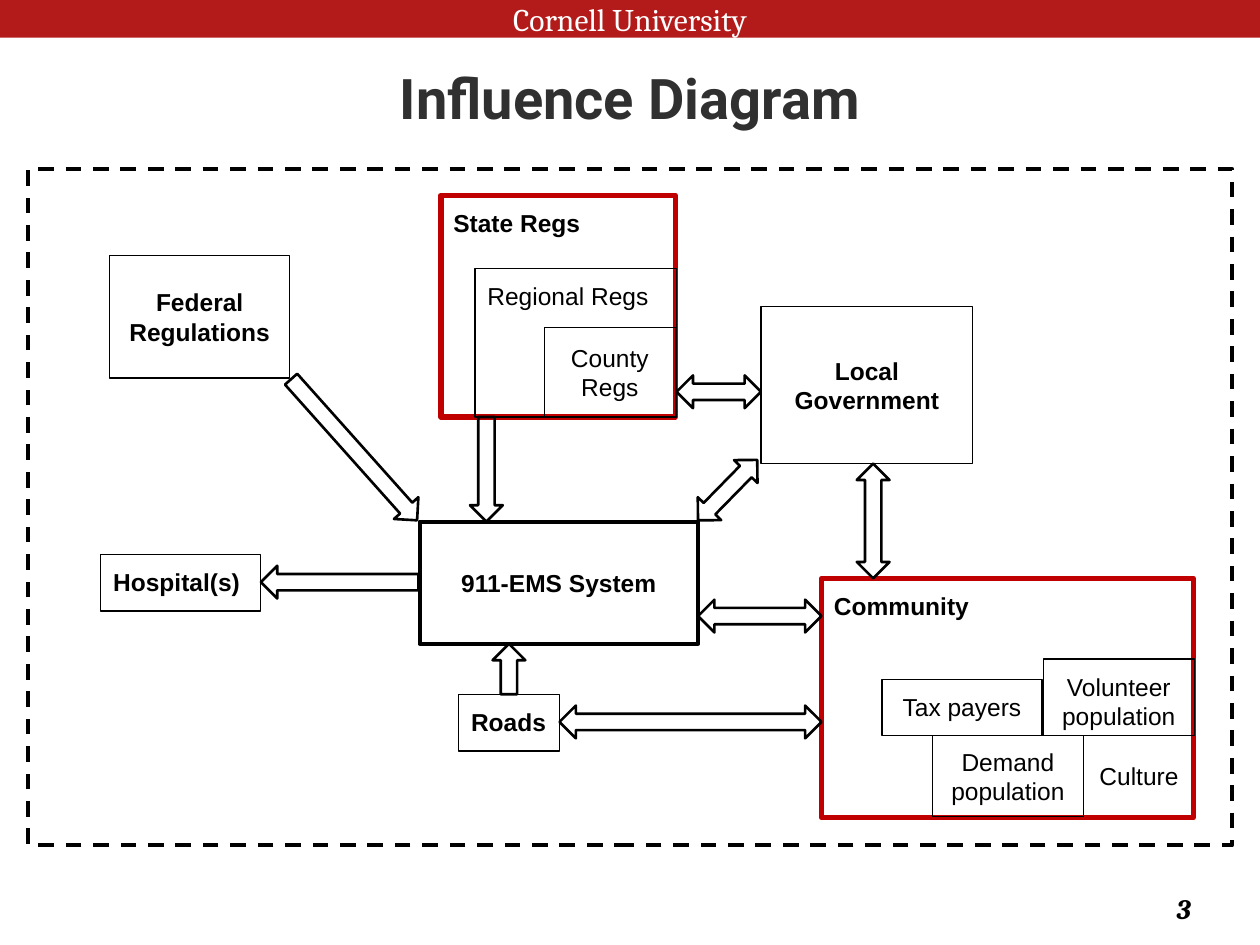
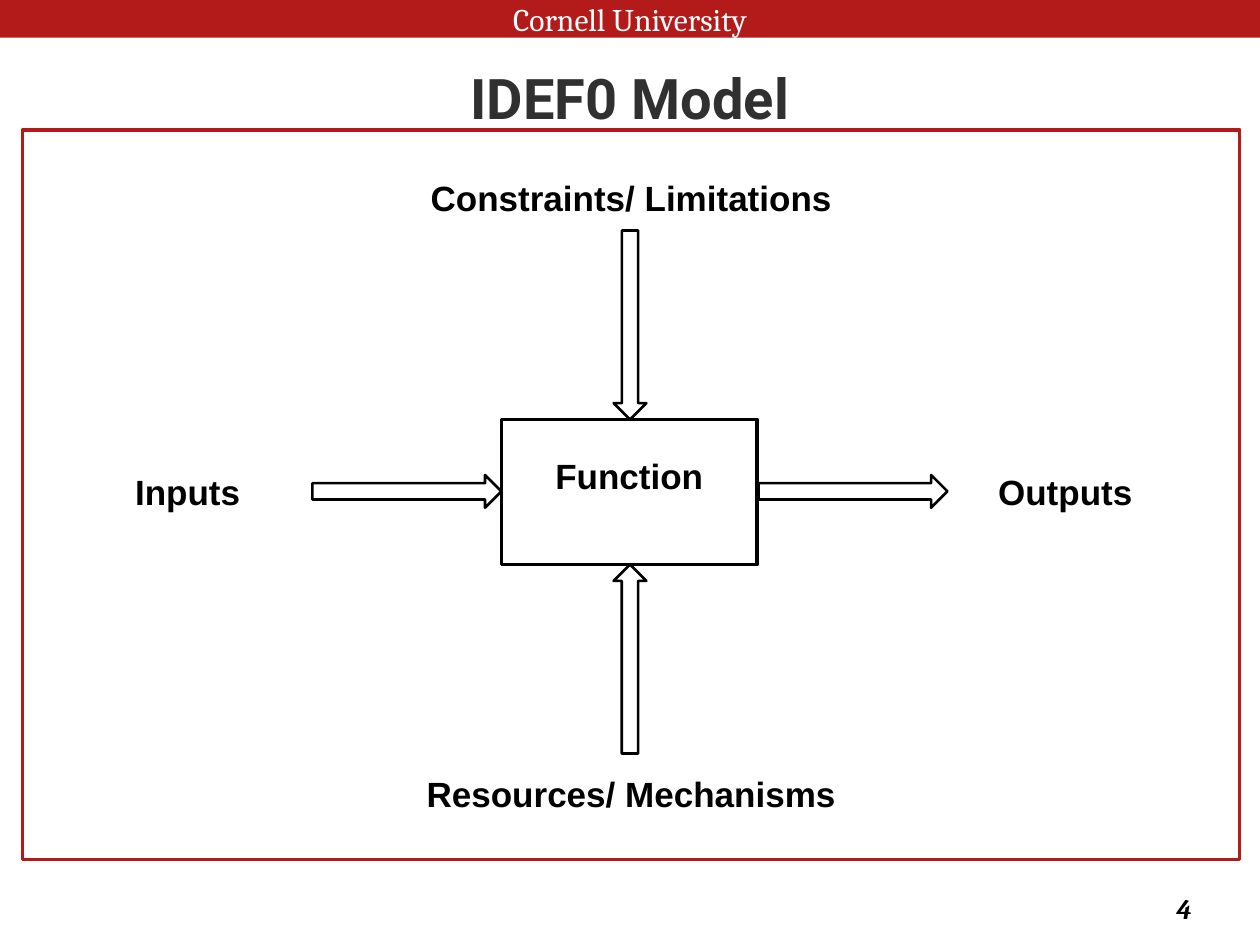
from dataclasses import dataclass
from math import atan2, degrees, hypot

from pptx import Presentation
from pptx.dml.color import RGBColor
from pptx.enum.dml import MSO_LINE
from pptx.enum.shapes import MSO_SHAPE
from pptx.enum.text import MSO_ANCHOR, MSO_AUTO_SIZE, PP_ALIGN
from pptx.util import Inches, Pt


@dataclass(frozen=True)
class Theme:
    red: str = "B31B1B"
    border_red: str = "C00000"
    ink: str = "000000"
    title_ink: str = "303030"
    white: str = "FFFFFF"
    body_font: str = "Arial"
    band_font: str = "Cambria"
    title_font: str = "Roboto"
    title_size: int = 32
    band_size: int = 18
    number_size: int = 16
    label_size: int = 20
    box_size: int = 14
    arrow_width: float = 0.26


THEME = Theme()
CENTER, LEFT = PP_ALIGN.CENTER, PP_ALIGN.LEFT
MIDDLE, TOP = MSO_ANCHOR.MIDDLE, MSO_ANCHOR.TOP


def write(sp, text, size=THEME.box_size, font=THEME.body_font, color=THEME.ink,
          bold=False, italic=False, align=CENTER, anchor=MIDDLE,
          inset=0.1, inset_y=0.1):
    tf = sp.text_frame
    tf.word_wrap = True
    tf.auto_size = MSO_AUTO_SIZE.NONE
    tf.vertical_anchor = anchor
    tf.margin_left = tf.margin_right = Inches(inset)
    tf.margin_top = tf.margin_bottom = Inches(inset_y)
    p = tf.paragraphs[0]
    p.alignment = align
    r = p.add_run()
    r.text = text
    r.font.name = font
    r.font.size = Pt(size)
    r.font.bold = bold
    r.font.italic = italic
    r.font.color.rgb = RGBColor.from_string(color)


class Deck:
    def __init__(self, theme):
        self.theme = theme
        self.prs = Presentation()
        self.prs.slide_width = Inches(10)
        self.prs.slide_height = Inches(7.5)
        self.slide = None

    def new_slide(self, title, number):
        t = self.theme
        self.slide = self.prs.slides.add_slide(self.prs.slide_layouts[5])
        self.label(str(number), (8.9, 7.01, 0.99, 0.4), size=t.number_size,
                   font=t.band_font, italic=True)
        self.shape((0, 0, 10, 0.3), "Cornell University", fill=t.red, line=None,
                   size=t.band_size, font=t.band_font, color=t.white, inset_y=0.05)
        sp = self.slide.shapes.title
        sp.left, sp.top, sp.width, sp.height = map(Inches, (0, 0.36, 10, 0.82))
        write(sp, title, size=t.title_size, font=t.title_font,
              color=t.title_ink, bold=True)

    def shape(self, at, text=None, kind=MSO_SHAPE.RECTANGLE, fill=None,
              line=THEME.ink, width=0.75, dash=None, **fmt):
        sp = self.slide.shapes.add_shape(kind, *map(Inches, at))
        sp.shadow.inherit = False
        if fill:
            sp.fill.solid()
            sp.fill.fore_color.rgb = RGBColor.from_string(fill)
        else:
            sp.fill.background()
        if line:
            sp.line.color.rgb = RGBColor.from_string(line)
            sp.line.width = Pt(width)
            if dash:
                sp.line.dash_style = dash
        else:
            sp.line.fill.background()
        if text:
            write(sp, text, **fmt)
        return sp

    def label(self, text, at, **fmt):
        sp = self.slide.shapes.add_textbox(*map(Inches, at))
        write(sp, text, **{"size": self.theme.label_size, "bold": True,
                           "inset_y": 0.05, **fmt})

    def arrow(self, start, end, both=False):
        (x1, y1), (x2, y2) = start, end
        length = hypot(x2 - x1, y2 - y1)
        thick = self.theme.arrow_width
        at = ((x1 + x2 - length) / 2, (y1 + y2 - thick) / 2, length, thick)
        kind = MSO_SHAPE.LEFT_RIGHT_ARROW if both else MSO_SHAPE.RIGHT_ARROW
        sp = self.shape(at, kind=kind, width=1.5)
        sp.rotation = degrees(atan2(y2 - y1, x2 - x1)) % 360

    def save(self):
        self.prs.save("out.pptx")


def influence_diagram(deck):
    deck.new_slide("Influence Diagram", 3)
    heading = {"bold": True, "align": LEFT, "anchor": TOP}
    container = {"line": deck.theme.border_red, "width": 3, **heading}

    deck.shape((0.22, 1.34, 9.56, 5.37), width=2.25, dash=MSO_LINE.DASH)
    boxes = [
        ("Culture", (8.6, 5.84, 0.88, 0.64), {}),
        ("911-EMS System", (3.33, 4.14, 2.21, 0.97), {"width": 2.25, "bold": True}),
        ("Hospital(s)", (0.8, 4.4, 1.27, 0.45), heading),
        ("Community", (6.52, 4.59, 2.95, 1.9), container),
        ("Federal Regulations", (0.87, 2.03, 1.43, 0.97), {"bold": True}),
        ("State Regs", (3.5, 1.55, 1.86, 1.76), container),
        ("Regional Regs", (3.77, 2.13, 1.6, 1.18), {"align": LEFT, "anchor": TOP}),
        ("County Regs", (4.32, 2.6, 1.04, 0.71), {}),
        ("Local Government", (6.04, 2.43, 1.68, 1.25), {"bold": True}),
        ("Demand population", (7.4, 5.84, 1.2, 0.64), {}),
        ("Volunteer population", (8.28, 5.23, 1.2, 0.61), {"anchor": TOP}),
        ("Tax payers", (7, 5.39, 1.27, 0.45), {"anchor": TOP}),
        ("Roads", (3.64, 5.51, 0.8, 0.45), heading),
    ]
    for text, at, fmt in boxes:
        deck.shape(at, text, **fmt)

    one_way = [
        ((3.86, 3.31), (3.86, 4.14)),
        ((2.31, 3.01), (3.31, 4.13)),
        ((3.32, 4.62), (2.07, 4.62)),
        ((4.04, 5.51), (4.04, 5.11)),
    ]
    two_way = [
        ((5.37, 3.11), (6.04, 3.11)),
        ((6.93, 3.68), (6.93, 4.59)),
        ((5.54, 4.89), (6.52, 4.89)),
        ((5.54, 4.13), (6.01, 3.65)),
        ((4.44, 5.73), (6.52, 5.73)),
    ]
    for start, end in one_way:
        deck.arrow(start, end)
    for start, end in two_way:
        deck.arrow(start, end, both=True)


def idef0_model(deck):
    deck.new_slide("IDEF0 Model", 4)
    deck.shape((3.98, 3.33, 2.03, 1.15), "Function", width=2, bold=True,
               size=deck.theme.label_size, anchor=TOP, inset_y=0.28)
    for start, end in [
        ((2.48, 3.9), (3.98, 3.9)),
        ((6.02, 3.9), (7.52, 3.9)),
        ((5, 5.98), (5, 4.48)),
        ((5, 1.83), (5, 3.33)),
    ]:
        deck.arrow(start, end)
    for text, at in [
        ("Inputs", (0.62, 3.64, 1.74, 0.52)),
        ("Outputs", (7.51, 3.64, 1.89, 0.52)),
        ("Constraints/ Limitations", (2.37, 1.31, 5.28, 0.52)),
        ("Resources/ Mechanisms", (2.55, 6.04, 4.92, 0.52)),
    ]:
        deck.label(text, at)
    deck.shape((0.18, 1.03, 9.66, 5.79), line=deck.theme.red, width=2)


def main():
    deck = Deck(THEME)
    influence_diagram(deck)
    idef0_model(deck)
    deck.save()


if __name__ == "__main__":
    main()
